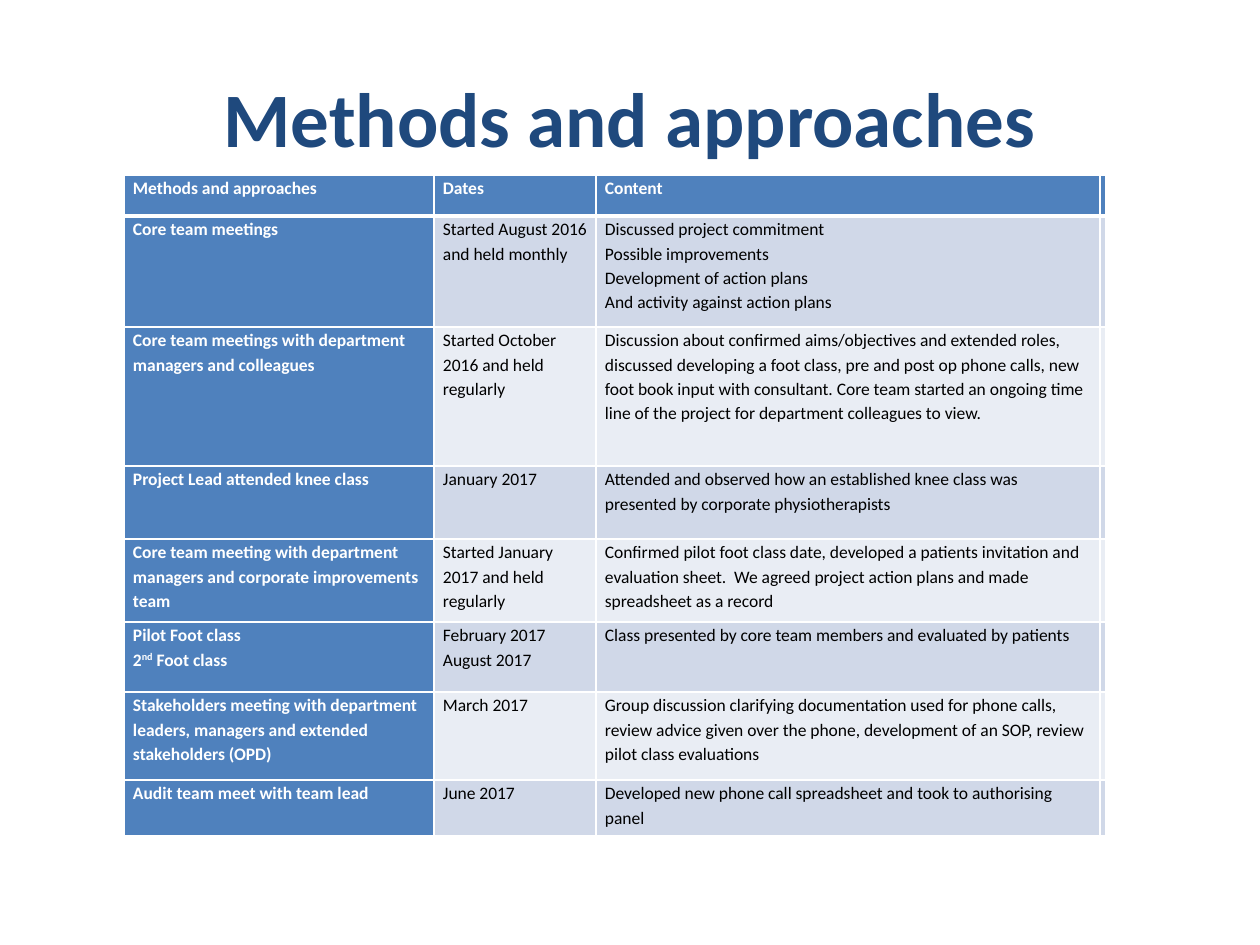
from lxml import etree
from pptx import Presentation
from pptx import util as u
from pptx.dml.color import RGBColor
from pptx.enum import text
from pptx.oxml import ns

PX = 914400 // 126
HUES = {"title": "1F497D", "head": "4F81BD", "odd": "D0D8E8", "even": "E9EDF4",
        "white": "FFFFFF", "black": "000000"}
COLS = [310, 162, 504, 6]
ROWS = [41, 111, 139, 73, 83, 70, 88, 56]
CELLS = [
    ["Methods and approaches", "Dates", "Content"],
    ["Core team meetings", "Started August 2016 and held monthly",
     "Discussed project commitment\nPossible improvements\n"
     "Development of action plans\nAnd activity against action plans"],
    ["Core team meetings with department managers and colleagues",
     "Started October 2016 and held regularly",
     "Discussion about confirmed aims/objectives and extended roles, discussed "
     "developing a foot class, pre and post op phone calls, new foot book input with "
     "consultant. Core team started an ongoing time line of the project for "
     "department colleagues to view."],
    ["Project Lead attended knee class", "January 2017",
     "Attended and observed how an established knee class was presented by "
     "corporate physiotherapists"],
    ["Core team meeting with department managers and corporate improvements team",
     "Started January 2017 and held regularly",
     "Confirmed pilot foot class date, developed a patients invitation and evaluation "
     "sheet.  We agreed project action plans and made spreadsheet as a record"],
    ["Pilot Foot class\n2^nd^ Foot class", "February 2017\nAugust 2017",
     "Class presented by core team members and evaluated by patients"],
    ["Stakeholders meeting with department leaders, managers and extended "
     "stakeholders (OPD)", "March 2017",
     "Group discussion clarifying documentation used for phone calls, review advice "
     "given over the phone, development of an SOP, review pilot class evaluations"],
    ["Audit team meet with team lead", "June 2017",
     "Developed new phone call spreadsheet and took to authorising panel"],
]


class Deck:
    def __init__(self, wide, high):
        self.font = "Calibri"
        self.prs = Presentation()
        self.prs.slide_width, self.prs.slide_height = wide * PX, high * PX
        self.slide = self.prs.slides.add_slide(self.prs.slide_layouts[6])

    def style(self, run, size, hue, bold):
        font = run.font
        font.name, font.size, font.bold = self.font, u.Pt(size), bold
        font.color.rgb = RGBColor.from_string(HUES[hue])

    def title(self, words, x, y, w, h):
        frame = self.slide.shapes.add_textbox(x * PX, y * PX, w * PX, h * PX).text_frame
        frame.word_wrap = True
        frame.vertical_anchor = text.MSO_ANCHOR.MIDDLE
        frame.text = words
        para = frame.paragraphs[0]
        para.alignment = text.PP_ALIGN.CENTER
        self.style(para.runs[0], 44, "title", True)

    def border(self, cell, row):
        props = cell._tc.get_or_add_tcPr()
        for side in "LRTB":
            thick = 3 if (row, side) in ((0, "B"), (1, "T")) else 1
            line = etree.SubElement(props, ns.qn("a:ln" + side), w=str(u.Pt(thick)))
            fill = etree.SubElement(line, ns.qn("a:solidFill"))
            etree.SubElement(fill, ns.qn("a:srgbClr"), val=HUES["white"])

    def label(self, cell, words, hue, bold):
        cell.margin_left = cell.margin_right = 9 * PX
        cell.text_frame.text = words
        for para in cell.text_frame.paragraphs:
            para.line_spacing = 1.15
            first, *rest = para.text.split("^")
            para.text = first
            for num, part in enumerate(rest):
                run = para.add_run()
                run.text = part
                if num % 2 == 0:
                    run._r.get_or_add_rPr().set("baseline", "30000")
            for run in para.runs:
                self.style(run, 10, hue, bold)

    def table(self, cells, x, y, cols, rows):
        grid = self.slide.shapes.add_table(
            len(rows), len(cols), x * PX, y * PX, sum(cols) * PX, sum(rows) * PX).table
        for col, wide in zip(grid.columns, cols):
            col.width = wide * PX
        for row, high in enumerate(rows):
            grid.rows[row].height = high * PX
            band = "odd" if row % 2 else "even"
            for col in range(len(cols)):
                cell = grid.cell(row, col)
                head = row == 0 or col == 0
                self.border(cell, row)
                cell.fill.solid()
                cell.fill.fore_color.rgb = RGBColor.from_string(HUES["head" if head else band])
                cell.margin_left = cell.margin_right = 0
                cell.margin_top = cell.margin_bottom = 0
                if col < len(cells[row]):
                    self.label(cell, cells[row][col], "white" if head else "black", head)


def main():
    deck = Deck(1260, 945)
    deck.title("Methods and approaches", 63, 38, 1134, 158)
    deck.table(CELLS, 124, 175, COLS, ROWS)
    deck.prs.save("out.pptx")


if __name__ == "__main__":
    main()
